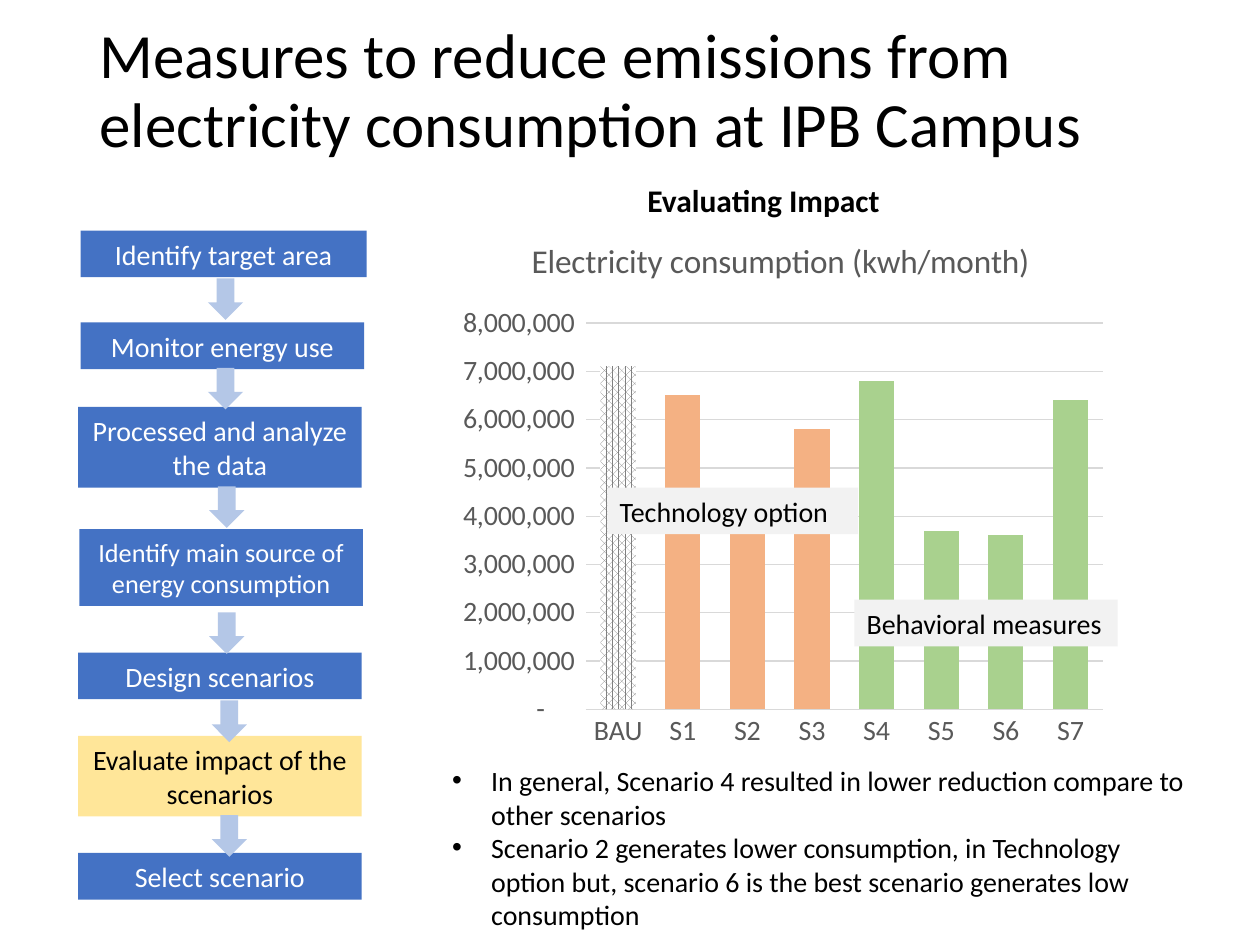
from dataclasses import dataclass

from lxml import etree
from pptx import Presentation
from pptx.chart.data import CategoryChartData
from pptx.dml.color import RGBColor
from pptx.enum.chart import XL_CHART_TYPE, XL_TICK_MARK
from pptx.enum.dml import MSO_PATTERN
from pptx.enum.shapes import MSO_SHAPE
from pptx.enum.text import MSO_ANCHOR, PP_ALIGN
from pptx.oxml.ns import qn
from pptx.util import Inches, Pt

RECT, ARROW = MSO_SHAPE.RECTANGLE, MSO_SHAPE.DOWN_ARROW
LEFT, CENTER = PP_ALIGN.LEFT, PP_ALIGN.CENTER
TOP, MIDDLE = MSO_ANCHOR.TOP, MSO_ANCHOR.MIDDLE
CLUSTERED, NO_TICKS = XL_CHART_TYPE.COLUMN_CLUSTERED, XL_TICK_MARK.NONE
DENSE = MSO_PATTERN.PERCENT_70
COLUMNS, ROWS = 100, 75  # slide grid


@dataclass(frozen=True)
class Theme:
    font: str = "Calibri"
    title: int = 36
    heading: int = 18
    chart_title: int = 19
    body: int = 16
    small: int = 15
    text: str = "000000"
    light: str = "FFFFFF"
    muted: str = "595959"
    grid: str = "D9D9D9"
    step: str = "4472C4"
    current: str = "FFE699"
    arrow: str = "B4C7E7"
    label: str = "F2F2F2"
    pattern: str = "808080"
    technology: str = "F4B183"
    behavior: str = "A9D18E"


def rgb(value):
    return RGBColor.from_string(value)


class SlideBuilder:
    def __init__(self, prs, theme):
        self.prs, self.theme = prs, theme
        self.s = prs.slides.add_slide(prs.slide_layouts[5])

    def box(self, x, y, w, h):
        dx, dy = self.prs.slide_width / COLUMNS, self.prs.slide_height / ROWS
        return [round(v) for v in (x * dx, y * dy, w * dx, h * dy)]

    def style(self, font, size, color, bold=False):
        formats = {"name": self.theme.font, "size": Pt(size), "bold": bold}
        for name, value in formats.items():
            setattr(font, name, value)
        font.color.rgb = rgb(color)

    def fill_text(self, sp, lines, size, color=None, align=LEFT, anchor=TOP,
                  bold=False, wrap=True, spacing=None):
        tf = sp.text_frame
        tf.word_wrap, tf.vertical_anchor = wrap, anchor
        for i, line in enumerate(lines):
            p = tf.add_paragraph() if i else tf.paragraphs[0]
            p.alignment, p.line_spacing = align, spacing
            r = p.add_run()
            r.text = line
            self.style(r.font, size, color or self.theme.text, bold)
        return sp

    def title(self, text, *place):
        sp = self.s.shapes.title
        for name, value in zip(("left", "top", "width", "height"), self.box(*place)):
            setattr(sp, name, value)
        self.fill_text(sp, [text], self.theme.title, anchor=MIDDLE, spacing=0.9)

    def text(self, lines, place, size, **formats):
        sp = self.s.shapes.add_textbox(*self.box(*place))
        return self.fill_text(sp, lines, size, **formats)

    def bullets(self, lines, place):
        sp = self.text(lines, place, self.theme.body)
        indent = Inches(0.31)
        for p in sp.text_frame.paragraphs:
            pPr = p._p.get_or_add_pPr()
            pPr.set("marL", str(indent))
            pPr.set("indent", str(-indent))
            etree.SubElement(pPr, qn("a:buFont")).set("typeface", "Arial")
            etree.SubElement(pPr, qn("a:buChar")).set("char", "•")

    def shape(self, kind, place, fill):
        sp = self.s.shapes.add_shape(kind, *self.box(*place))
        sp.shadow.inherit = False
        sp.fill.solid()
        sp.fill.fore_color.rgb = rgb(fill)
        sp.line.fill.background()
        return sp

    def panel(self, text, place, fill, size, **formats):
        sp = self.shape(RECT, place, fill)
        self.fill_text(sp, [text], size, anchor=MIDDLE, **formats)

    def column_chart(self, title, values, colors, place, plot_area):
        t = self.theme
        data = CategoryChartData()
        data.categories = list(values)
        data.add_series("Series 1", list(values.values()))
        chart = self.s.shapes.add_chart(CLUSTERED, *self.box(*place), data).chart
        self.style(chart.font, t.body, t.text)
        chart.has_legend = False
        chart.has_title = True
        p = chart.chart_title.text_frame.paragraphs[0]
        r = p.add_run()
        r.text = title
        self.style(r.font, t.chart_title, t.muted)

        # Axes
        cat, val = chart.category_axis, chart.value_axis
        for axis in (cat, val):
            axis.major_tick_mark = axis.minor_tick_mark = NO_TICKS
            self.style(axis.tick_labels.font, t.body, t.muted)
        for line in (cat.format.line, val.major_gridlines.format.line):
            line.width = Pt(0.75)
            line.color.rgb = rgb(t.grid)
        val.format.line.fill.background()
        val.minimum_scale, val.maximum_scale, val.major_unit = 0, 8_000_000, 1_000_000
        val.tick_labels.number_format = r'_(* #,##0_);_(* \(#,##0\);_(* "-"??_);_(@_)'
        val.tick_labels.number_format_is_linked = False

        # Columns: the baseline is patterned, the scenarios are plain
        plot = chart.plots[0]
        plot.gap_width, plot.overlap, plot.vary_by_categories = 83, -27, False
        series = plot.series[0]
        series.format.fill.solid()
        series.format.fill.fore_color.rgb = rgb(t.step)
        for i, color in enumerate(colors):
            fill = series.points[i].format.fill
            if color == t.pattern:
                fill.patterned()
                fill.pattern = DENSE
                fill.back_color.rgb = rgb(t.light)
            else:
                fill.solid()
            fill.fore_color.rgb = rgb(color)

        # Inner plot area as shares of the chart
        area = chart._chartSpace.chart.plotArea
        for old in area.findall(qn("c:layout")):
            area.remove(old)
        layout = etree.Element(qn("c:layout"))
        area.insert(0, layout)
        manual = etree.SubElement(layout, qn("c:manualLayout"))
        settings = {"layoutTarget": "inner", "xMode": "edge", "yMode": "edge"}
        settings.update(zip("xywh", plot_area))
        for name, value in settings.items():
            etree.SubElement(manual, qn(f"c:{name}")).set("val", str(value))


def main():
    prs = Presentation()
    prs.slide_width, prs.slide_height = Inches(10), Inches(7.5)
    t = Theme()
    b = SlideBuilder(prs, t)
    b.title("Measures to reduce emissions from electricity consumption at IPB Campus",
            6.9, 1, 88.4, 12.7)

    # Impact chart with its two group labels
    values = {"BAU": 7_100_000, "S1": 6_500_000, "S2": 4_300_000, "S3": 5_800_000,
              "S4": 6_800_000, "S5": 3_700_000, "S6": 3_600_000, "S7": 6_400_000}
    colors = [t.pattern] + [t.technology] * 3 + [t.behavior] * 4
    b.column_chart("Electricity consumption (kwh/month)", values, colors,
                   (35.3, 17, 53.3, 43.2), (0.21, 0.2, 0.77, 0.71))
    b.panel("Technology option", (48.2, 38.7, 19.9, 3.7), t.label, t.body)
    b.panel("Behavioral measures", (67.8, 47.6, 20.9, 3.7), t.label, t.body, wrap=False)

    # Findings
    b.bullets(["In general, Scenario 4 resulted in lower reduction compare to other scenarios",
               "Scenario 2 generates lower consumption, in Technology option but, "
               "scenario 6 is the best scenario generates low consumption"],
              (34.9, 60.1, 60.9, 14.5))

    # Process steps: text, left, top, width, height
    steps = [("Identify target area", 6.4, 18.3, 22.7, 3.7),
             ("Monitor energy use", 6.4, 25.6, 22.5, 3.7),
             ("Processed and analyze the data", 6.2, 32.3, 22.5, 6.4),
             ("Identify main source of energy consumption", 6.3, 42, 22.5, 6.1),
             ("Design scenarios", 6.2, 51.8, 22.5, 3.7),
             ("Evaluate impact of the scenarios", 6.2, 58.4, 22.5, 6.4),
             ("Select scenario", 6.2, 67.7, 22.5, 3.7)]
    for i, (text, *place) in enumerate(steps):
        fill, color = (t.current, t.text) if i == 5 else (t.step, t.light)
        b.panel(text, place, fill, t.small if i == 3 else t.body,
                color=color, align=CENTER)
    for x, y in [(16.5, 22.1), (16.5, 29.2), (16.6, 38.6),
                 (16.6, 48.6), (16.8, 55.6), (16.8, 64.7)]:
        b.shape(ARROW, (x, y, 2.8, 3.3), t.arrow)

    # Chart heading
    b.text(["Evaluating Impact"], (50.4, 13.9, 20.6, 4), t.heading, bold=True, wrap=False)
    prs.save("out.pptx")


if __name__ == "__main__":
    main()
